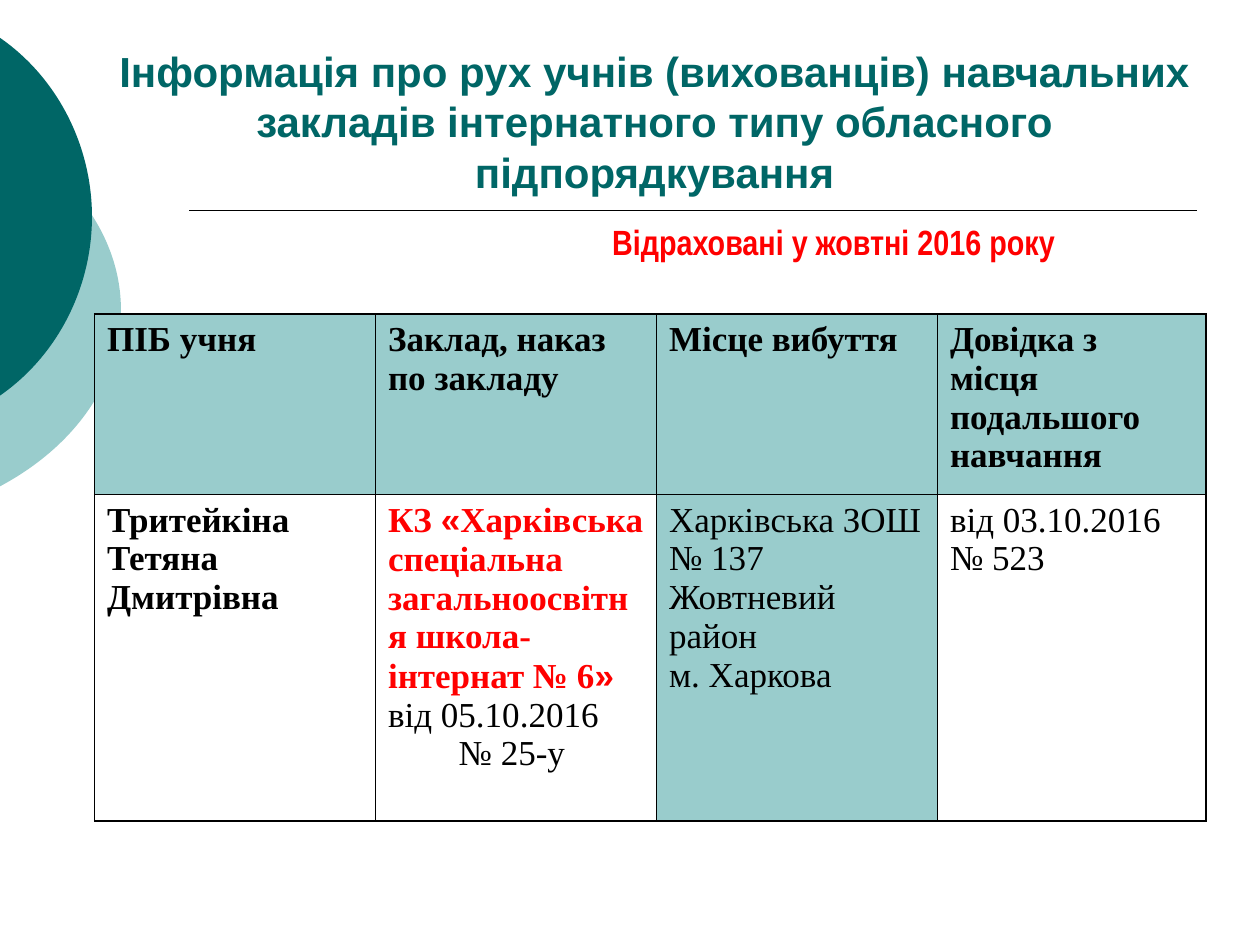
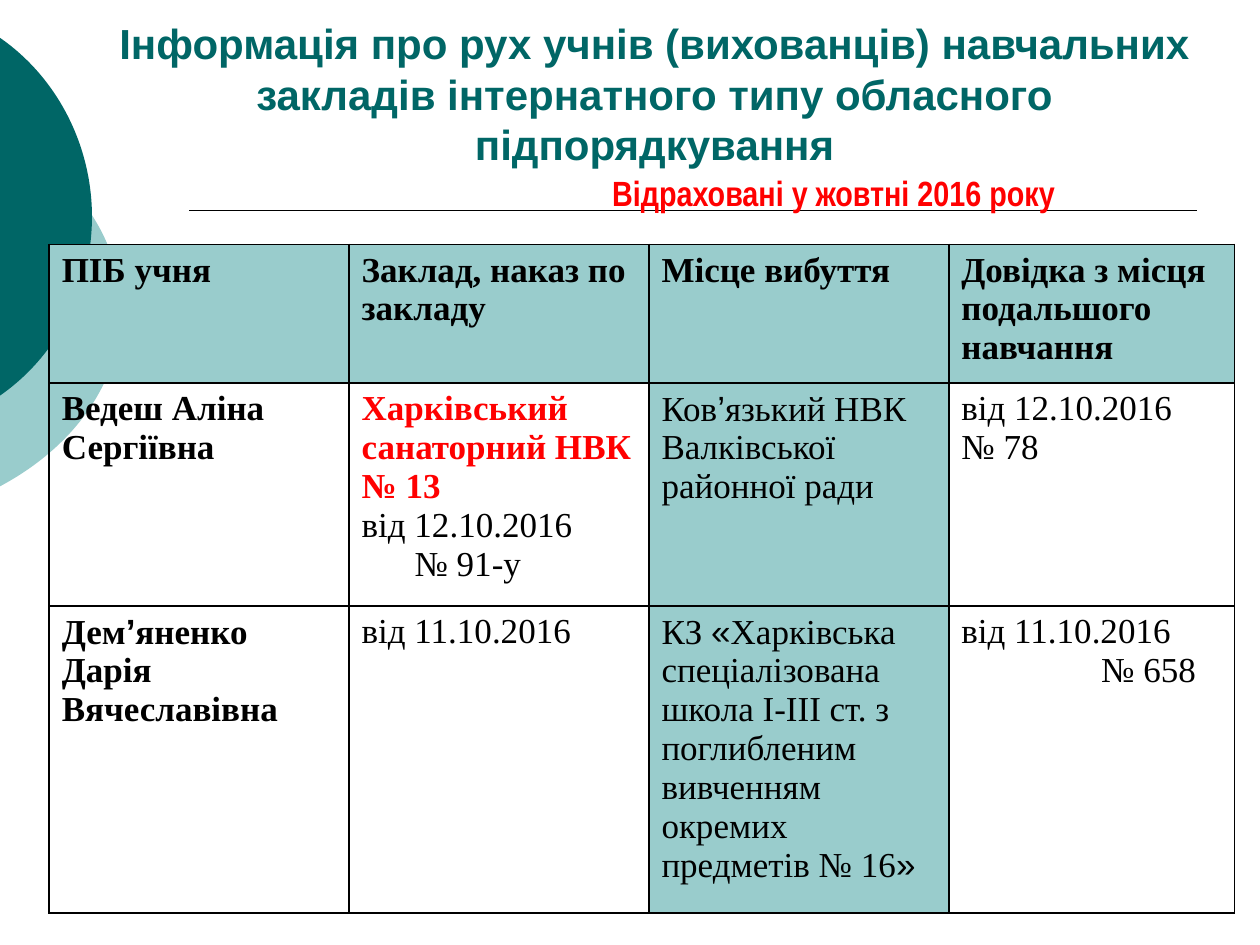
"""Build two slides listing pupils who left boarding schools in October 2016."""
from itertools import groupby

from lxml import etree
from pptx import Presentation
from pptx.dml.color import RGBColor
from pptx.enum.shapes import MSO_CONNECTOR
from pptx.enum.text import MSO_ANCHOR, MSO_AUTO_SIZE, PP_ALIGN
from pptx.oxml.ns import qn
from pptx.util import Inches, Pt

STRAIGHT = MSO_CONNECTOR.STRAIGHT
BOTTOM, TOP = MSO_ANCHOR.BOTTOM, MSO_ANCHOR.TOP
CENTER, LEFT = PP_ALIGN.CENTER, PP_ALIGN.LEFT
NO_FIT = MSO_AUTO_SIZE.NONE

WIDTH, HEIGHT = 10, 7.5
TITLE_ONLY = 5
TEAL, PALE, RED, BLACK = "006666", "99CCCC", "FF0000", "000000"
BODY_FONT, MARK_FONT = "Times New Roman", "Arial"
MARKS = "«»’"
SHADED_COLUMN = 2

TITLE = ("Інформація про рух учнів (вихованців) навчальних закладів "
         "інтернатного типу обласного підпорядкування")
SUBTITLE = "Відраховані у жовтні 2016 року"
HEADER = ["ПІБ учня", "Заклад, наказ по закладу", "Місце вибуття",
          "Довідка з місця подальшого навчання"]

STYLES = {"bold": (BLACK, True), "red": (RED, True), "plain": (BLACK, False)}
HEADER_ROW = [[(label, "bold", 0)] for label in HEADER]

SLIDES = [
    {
        "title": (0.36, 1.25), "subtitle_top": 1.7,
        "table": (0.75, 2.49), "columns": [2.23, 2.23, 2.23, 2.13],
        "heights": [1.43, 2.59],
        "rows": [
            [[("Тритейкіна Тетяна Дмитрівна", "bold", 0)],
             [("КЗ «Харківська спеціальна загальноосвітня школа-інтернат № 6»", "red", 0),
              ("від 05.10.2016", "plain", 0), ("№ 25-у", "plain", 0.56)],
             [("Харківська ЗОШ № 137 Жовтневий район", "plain", 0),
              ("м. Харкова", "plain", 0)],
             [("від 03.10.2016 № 523", "plain", 0)]],
        ],
    },
    {
        "title": (0, 1.39), "subtitle_top": 1.31,
        "table": (0.39, 1.94), "columns": [2.38, 2.38, 2.38, 2.27],
        "heights": [1.1, 1.77, 2.43],
        "rows": [
            [[("Ведеш Аліна Сергіївна", "bold", 0)],
             [("Харківський санаторний НВК № 13", "red", 0),
              ("від 12.10.2016", "plain", 0), ("№ 91-у", "plain", 0.42)],
             [("Ков’язький НВК Валківської районної ради", "plain", 0)],
             [("від 12.10.2016", "plain", 0), ("№ 78", "plain", 0)]],
            [[("Дем’яненко", "bold", 0), ("Дарія Вячеславівна", "bold", 0)],
             [("від 11.10.2016", "plain", 0)],
             [("КЗ «Харківська спеціалізована школа І-ІІІ ст. з поглибленим "
               "вивченням окремих предметів № 16»", "plain", 0)],
             [("від 11.10.2016", "plain", 0), ("№ 658", "plain", 1.11)]],
        ],
    },
]

ARCS = [
    (PALE, (-3.54, 0.75, 4.5, 3.42),
     [(0, 1.06), (0.6, 1.38), (0.96, 1.9), (0.96, 2.46)]),
    (TEAL, (-2.65, 0, 3.38, 3.45),
     [(0, 0.3), (0.46, 0.62), (0.73, 1.16), (0.73, 1.72)]),
]


def color(value):
    return RGBColor.from_string(value)


def add_span(para, text, font, size, shade, bold):
    span = para.add_run()
    span.text = text
    span.font.name, span.font.size, span.font.bold = font, Pt(size), bold
    span.font.color.rgb = color(shade)


def draw_curves(arc, frame, points):
    left, top, width, height = frame
    outline = arc._element.find(".//" + qn("a:path"))
    for child in list(outline):
        outline.remove(child)
    outline.set("w", str(Inches(width)))
    outline.set("h", str(Inches(height)))
    steps = (("a:moveTo", points[:1]), ("a:cubicBezTo", points[1:4]),
             ("a:cubicBezTo", points[4:]), ("a:close", []))
    for tag, targets in steps:
        step = etree.SubElement(outline, qn(tag))
        for x, y in targets:
            etree.SubElement(step, qn("a:pt"), x=str(Inches(x - left)),
                             y=str(Inches(y - top)))


def add_arc(page, shade, frame, upper):
    middle = upper[-1][1]
    points = upper + [(x, 2 * middle - y) for x, y in reversed(upper[:-1])]
    corners = [(Inches(x), Inches(y)) for x, y in points[::3]]
    builder = page.shapes.build_freeform(*corners[0])
    builder.add_line_segments(corners[1:], close=True)
    arc = builder.convert_to_shape()
    arc.left, arc.top, arc.width, arc.height = (Inches(v) for v in frame)
    draw_curves(arc, frame, points)
    arc.shadow.inherit = False
    arc.fill.solid()
    arc.fill.fore_color.rgb = color(shade)
    arc.line.fill.background()


def add_rule(page):
    left, right, level = (Inches(v) for v in (0.15 * WIDTH, 0.95 * WIDTH, 1.67))
    rule = page.shapes.add_connector(STRAIGHT, left, level, right, level)
    rule.line.color.rgb = color(BLACK)
    rule.line.width = Pt(1)
    etree.SubElement(rule._element.spPr, qn("a:effectLst"))


def set_title(page, top, height):
    title = page.shapes.title
    title.left, title.top, title.width, title.height = (
        Inches(v) for v in (0.59, top, 9.21, height))
    frame = title.text_frame
    frame.word_wrap, frame.auto_size, frame.vertical_anchor = True, NO_FIT, BOTTOM
    para = frame.paragraphs[0]
    para.alignment = CENTER
    add_span(para, TITLE, "Arial", 24, TEAL, True)


def add_subtitle(page, top):
    box = page.shapes.add_textbox(*(Inches(v) for v in (4.76, top, 4.96, 0.43)))
    box.text_frame.word_wrap = True
    add_span(box.text_frame.paragraphs[0], SUBTITLE, "Arial Narrow", 20, RED, True)


def add_borders(cell):
    properties = cell._tc.get_or_add_tcPr()
    for index, side in enumerate(("a:lnL", "a:lnR", "a:lnT", "a:lnB")):
        line = etree.Element(qn(side), w=str(Pt(1)))
        fill = etree.SubElement(line, qn("a:solidFill"))
        etree.SubElement(fill, qn("a:srgbClr"), val=BLACK)
        properties.insert(index, line)


def fill_cell(cell, paragraphs, shaded):
    if shaded:
        cell.fill.solid()
        cell.fill.fore_color.rgb = color(PALE)
    else:
        cell.fill.background()
    add_borders(cell)
    cell.vertical_anchor = TOP
    frame = cell.text_frame
    for index, (text, style, indent) in enumerate(paragraphs):
        para = frame.add_paragraph() if index else frame.paragraphs[0]
        para.alignment = LEFT
        if indent:
            para._p.get_or_add_pPr().set("marL", str(Inches(indent)))
        for is_mark, letters in groupby(text, lambda letter: letter in MARKS):
            font = MARK_FONT if is_mark else BODY_FONT
            add_span(para, "".join(letters), font, 20, *STYLES[style])


def add_pupil_table(page, content):
    rows = [HEADER_ROW] + content["rows"]
    columns, heights = content["columns"], content["heights"]
    area = (*content["table"], sum(columns), sum(heights))
    table = page.shapes.add_table(
        len(rows), len(columns), *(Inches(v) for v in area)).table
    table.first_row = table.horz_banding = False
    for column, width in zip(table.columns, columns):
        column.width = Inches(width)
    for row, height in zip(table.rows, heights):
        row.height = Inches(height)
    for r, row in enumerate(rows):
        for c, paragraphs in enumerate(row):
            fill_cell(table.cell(r, c), paragraphs, r == 0 or c == SHADED_COLUMN)


def main():
    deck = Presentation()
    deck.slide_width, deck.slide_height = Inches(WIDTH), Inches(HEIGHT)
    for content in SLIDES:
        page = deck.slides.add_slide(deck.slide_layouts[TITLE_ONLY])
        for shade, frame, upper in ARCS:
            add_arc(page, shade, frame, upper)
        add_rule(page)
        set_title(page, *content["title"])
        add_subtitle(page, content["subtitle_top"])
        add_pupil_table(page, content)
    deck.save("out.pptx")


if __name__ == "__main__":
    main()
